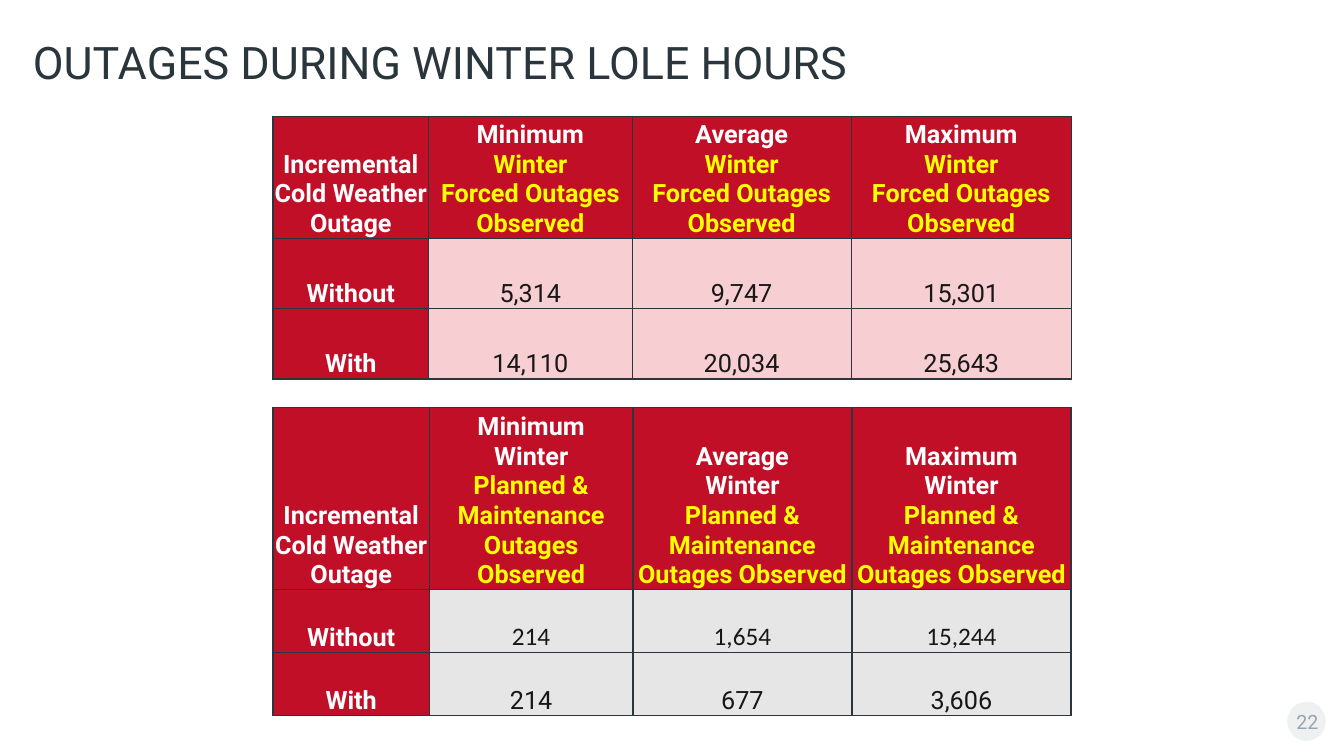
import pptx
import pptx.util
import pptx.dml.color
import pptx.enum.shapes
import pptx.enum.text
import pptx.oxml
import pptx.oxml.ns
from dataclasses import dataclass

Cm = pptx.util.Cm
Pt = pptx.util.Pt
ALIGN = pptx.enum.text.PP_ALIGN
ANCHOR = pptx.enum.text.MSO_ANCHOR

# Content
TITLE = "OUTAGES DURING WINTER LOLE HOURS"
PAGE_NUMBER = "22"
CORNER = "Incremental Cold Weather Outage"
MEASURES = ["Minimum", "Average", "Maximum"]


@dataclass
class Theme:
    ink: str = "2A363B"
    body: str = "181717"
    red: str = "C10F28"
    pink: str = "F7CFD3"
    grey: str = "E7E6E6"
    white: str = "FFFFFF"
    yellow: str = "FFFF00"
    badge: str = "EEF0F1"
    badge_text: str = "99A4AD"
    font: str = "Roboto"
    alternate_font: str = "Calibri"
    title_size: int = 32
    table_size: int = 18
    badge_size: int = 14


theme = Theme()

# Header lines below each measure are (text, colour); rows are (label, font, values)
TABLES = [
    {
        "top": 2.94,
        "columns": [3.92, 5.13, 5.52, 5.55],
        "heights": [3, 1.77, 1.77],
        "header": [("Winter", theme.yellow), ("Forced Outages Observed", theme.yellow)],
        "fill": theme.pink,
        "rows": [
            ("Without", theme.font, ["5,314", "9,747", "15,301"]),
            ("With", theme.font, ["14,110", "20,034", "25,643"]),
        ],
    },
    {
        "top": 10.27,
        "columns": [3.94, 5.13, 5.52, 5.52],
        "heights": [4.52, 1.58, 1.58],
        "header": [("Winter", theme.white),
                   ("Planned & Maintenance Outages Observed", theme.yellow)],
        "fill": theme.grey,
        "rows": [
            ("Without", theme.alternate_font, ["214", "1,654", "15,244"]),
            ("With", theme.font, ["214", "677", "3,606"]),
        ],
    },
]
TABLE_LEFT = 6.88


def rgb(value):
    return pptx.dml.color.RGBColor.from_string(value)


def apply(target, values):
    for name, value in values.items():
        setattr(target, name, value)


def write(frame, lines, size, font=theme.font, bold=False, **para_format):
    """Fill a text frame with (text, colour) lines, one paragraph each."""
    for index, (text, colour) in enumerate(lines):
        para = frame.paragraphs[0] if index == 0 else frame.add_paragraph()
        apply(para, para_format)
        span = para.add_run()
        span.text = text
        apply(span.font, {"name": font, "size": Pt(size), "bold": bold})
        span.font.color.rgb = rgb(colour)


def add_label(page, place, text, colour, size, frame_format, **para_format):
    box = page.shapes.add_textbox(*map(Cm, place))
    apply(box.text_frame, {"word_wrap": True, **frame_format})
    write(box.text_frame, [(text, colour)], size, **para_format)


def add_borders(cell):
    properties = cell._tc.get_or_add_tcPr()
    for side in ("lnL", "lnR", "lnT", "lnB"):
        properties.append(pptx.oxml.parse_xml(
            f'<a:{side} {pptx.oxml.ns.nsdecls("a")} w="{Pt(1)}"><a:solidFill>'
            f'<a:srgbClr val="{theme.ink}"/></a:solidFill></a:{side}>'))


def fill_cell(cell, lines, fill, font=theme.font, bold=True):
    apply(cell, {"vertical_anchor": ANCHOR.BOTTOM, "margin_left": Cm(0.02),
                 "margin_right": Cm(0.02), "margin_top": Cm(0.02), "margin_bottom": 0})
    add_borders(cell)
    cell.fill.solid()
    cell.fill.fore_color.rgb = rgb(fill)
    write(cell.text_frame, lines, theme.table_size, font, bold, alignment=ALIGN.CENTER)


def add_outage_table(page, data):
    columns, heights = data["columns"], data["heights"]
    table = page.shapes.add_table(
        len(heights), len(columns), Cm(TABLE_LEFT), Cm(data["top"]),
        Cm(sum(columns)), Cm(sum(heights))).table
    apply(table, {"first_row": False, "horz_banding": False})
    for column, width in zip(table.columns, columns):
        column.width = Cm(width)
    for row, height in zip(table.rows, heights):
        row.height = Cm(height)

    # Header row
    fill_cell(table.cell(0, 0), [(CORNER, theme.white)], theme.red)
    for number, measure in enumerate(MEASURES, 1):
        lines = [(measure, theme.white)] + data["header"]
        fill_cell(table.cell(0, number), lines, theme.red)

    # Value rows
    for line, (label, font, values) in enumerate(data["rows"], 1):
        fill_cell(table.cell(line, 0), [(label, theme.white)], theme.red)
        for number, value in enumerate(values, 1):
            fill_cell(table.cell(line, number), [(value, theme.body)],
                      data["fill"], font, False)


def main():
    deck = pptx.Presentation()
    apply(deck, {"slide_width": Cm(33.87), "slide_height": Cm(19.05)})
    page = deck.slides.add_slide(deck.slide_layouts[6])

    # Page number badge
    badge = page.shapes.add_shape(pptx.enum.shapes.MSO_SHAPE.OVAL,
                                  Cm(32.44), Cm(17.68), Cm(0.97), Cm(0.99))
    badge.shadow.inherit = False
    badge.fill.solid()
    badge.fill.fore_color.rgb = rgb(theme.badge)
    badge.line.fill.background()
    add_label(page, (32.44, 17.58, 1.02, 1.02), PAGE_NUMBER, theme.badge_text,
              theme.badge_size,
              {"vertical_anchor": ANCHOR.BOTTOM, "margin_left": Cm(0.08),
               "margin_right": Cm(0.08)},
              alignment=ALIGN.CENTER)

    # Title
    add_label(page, (0.58, 0.38, 30.4, 2.62), TITLE, theme.ink, theme.title_size,
              {"vertical_anchor": ANCHOR.MIDDLE}, line_spacing=0.75)

    # Tables
    for data in TABLES:
        add_outage_table(page, data)

    deck.save("out.pptx")


if __name__ == "__main__":
    main()
